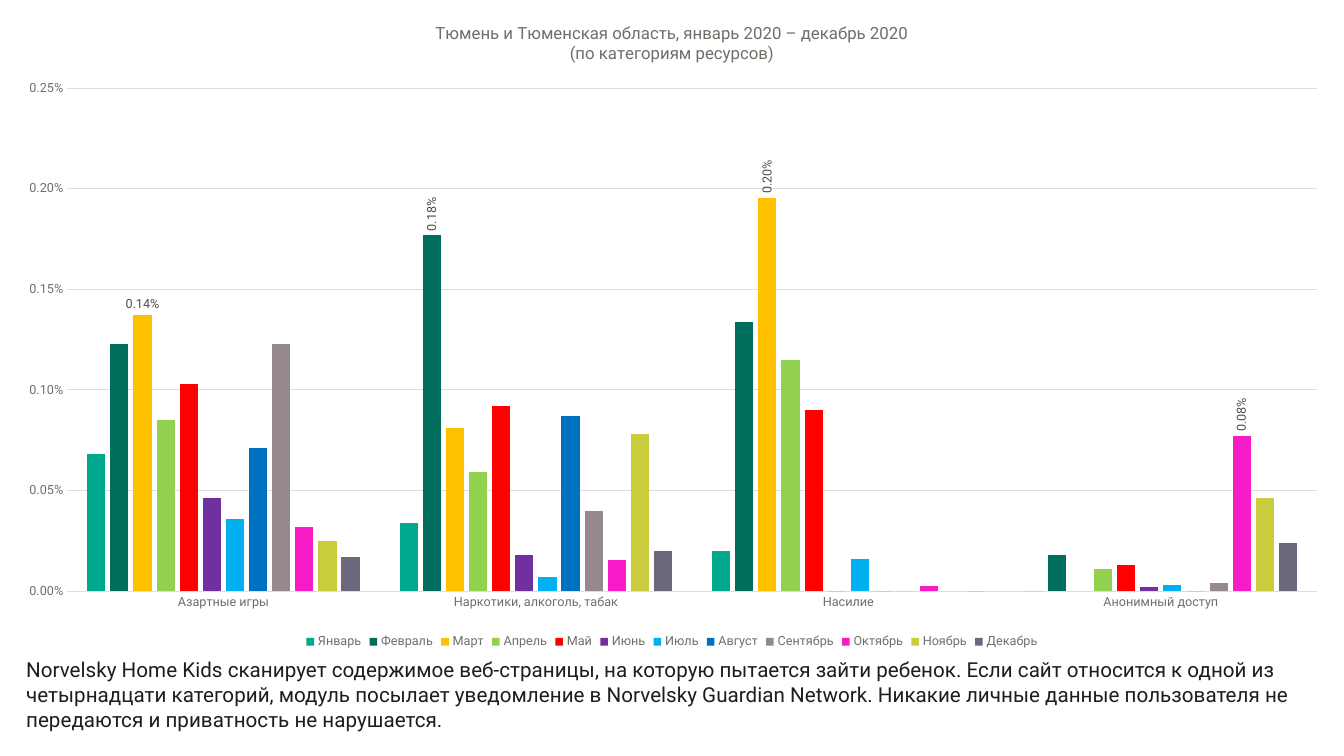
from lxml import etree
from pptx import Presentation
from pptx.chart.data import CategoryChartData
from pptx.dml.color import RGBColor
from pptx.enum.chart import XL_CHART_TYPE, XL_LABEL_POSITION, XL_LEGEND_POSITION, XL_TICK_MARK
from pptx.oxml.ns import qn
from pptx.util import Inches, Pt

COLUMNS = XL_CHART_TYPE.COLUMN_CLUSTERED
OUTSIDE = XL_LABEL_POSITION.OUTSIDE_END
BOTTOM = XL_LEGEND_POSITION.BOTTOM
NO_TICK = XL_TICK_MARK.NONE

FONT = "Roboto"
PERCENT = "0.00%"
COLORS = {"text": "1D1D1B", "muted": "6F6F68", "label": "4D4D49", "grid": "DEDEDC"}
TITLE_LINES = ["Тюмень и Тюменская область, январь 2020 – декабрь 2020",
               "(по категориям ресурсов)"]
CATEGORIES = ["Азартные игры", "Наркотики, алкоголь, табак", "Насилие", "Анонимный доступ"]
# Month, colour, values in percent by category
MONTHS = [
    ("Январь", "00A88E", (0.068, 0.034, 0.02, 0)),
    ("Февраль", "006D5D", (0.1227, 0.1768, 0.1335, 0.018)),
    ("Март", "FFC000", (0.137, 0.0808, 0.1954, 0)),
    ("Апрель", "92D050", (0.085, 0.059, 0.115, 0.011)),
    ("Май", "FF0000", (0.103, 0.092, 0.09, 0.013)),
    ("Июнь", "7030A0", (0.046, 0.018, 0, 0.002)),
    ("Июль", "00B0F0", (0.036, 0.007, 0.016, 0.003)),
    ("Август", "0070C0", (0.071, 0.087, 0, 0)),
    ("Сентябрь", "95888F", (0.123, 0.04, 0, 0.004)),
    ("Октябрь", "F71BC8", (0.0317, 0.0152, 0.0025, 0.0772)),
    ("Ноябрь", "C9CC3C", (0.025, 0.078, 0, 0.046)),
    ("Декабрь", "6D677D", (0.017, 0.02, 0, 0.024)),
]
# Month, category index, rotation in degrees
PEAK_LABELS = [("Март", 0, 0), ("Февраль", 1, -90), ("Март", 2, -90), ("Октябрь", 3, -90)]
NOTE = ("Norvelsky Home Kids сканирует содержимое веб-страницы, на которую пытается зайти "
        "ребенок. Если сайт относится к одной из четырнадцати категорий, модуль посылает "
        "уведомление в Norvelsky Guardian Network. Никакие личные данные пользователя не "
        "передаются и приватность не нарушается.")


class SlideBuilder:
    def __init__(self, page):
        self.page = page

    def style_font(self, font, size, color):
        font.name = FONT
        font.size = Pt(size)
        font.bold = False
        font.color.rgb = RGBColor.from_string(COLORS[color])

    def style_line(self, line):
        line.color.rgb = RGBColor.from_string(COLORS["grid"])
        line.width = Pt(0.75)

    def add_column_chart(self, left, top, width, height):
        data = CategoryChartData(number_format=PERCENT)
        data.categories = CATEGORIES
        for month, _, values in MONTHS:
            data.add_series(month, [round(value / 100, 6) for value in values])
        chart = self.page.shapes.add_chart(
            COLUMNS, Inches(left), Inches(top), Inches(width), Inches(height), data).chart
        plot = chart.plots[0]
        plot.gap_width, plot.overlap, plot.vary_by_categories = 219, -27, False
        for series, (_, color, _) in zip(plot.series, MONTHS):
            series.format.fill.solid()
            series.format.fill.fore_color.rgb = RGBColor.from_string(color)
            series.invert_if_negative = False
        self.add_chart_title(chart)
        self.style_axes(chart)
        chart.has_legend = True
        chart.legend.position = BOTTOM
        chart.legend.include_in_layout = False
        self.style_font(chart.legend.font, 9, "muted")
        return chart

    def add_chart_title(self, chart):
        chart.has_title = True
        chart.chart_title.include_in_layout = False
        frame = chart.chart_title.text_frame
        frame.text = "\n".join(TITLE_LINES)
        for para in frame.paragraphs:
            self.style_font(para.font, 12, "muted")

    def style_axes(self, chart):
        for axis in (chart.category_axis, chart.value_axis):
            axis.major_tick_mark = axis.minor_tick_mark = NO_TICK
            self.style_font(axis.tick_labels.font, 9, "muted")
        self.style_line(chart.category_axis.format.line)
        values = chart.value_axis
        values.minimum_scale, values.maximum_scale, values.major_unit = 0, 0.0025, 0.0005
        values.tick_labels.number_format = PERCENT
        values.tick_labels.number_format_is_linked = False
        values.format.line.fill.background()
        self.style_line(values.major_gridlines.format.line)

    def place_plot(self, chart, **fractions):
        """Fix the inner plot area, given as fractions of the chart frame."""
        area = chart.plots[0]._element.getparent()
        for old in area.findall(qn("c:layout")):
            area.remove(old)
        layout = etree.Element(qn("c:layout"))
        area.insert(0, layout)
        manual = etree.SubElement(layout, qn("c:manualLayout"))
        settings = {"layoutTarget": "inner", "xMode": "edge", "yMode": "edge", **fractions}
        for name, value in settings.items():
            etree.SubElement(manual, qn(f"c:{name}")).set("val", str(value))

    def label_peaks(self, chart):
        series_by_month = {series.name: series for series in chart.plots[0].series}
        for month, index, degrees in PEAK_LABELS:
            series = series_by_month[month]
            series.data_labels.show_value = False
            label = series.points[index].data_label
            self.style_font(label.font, 9, "label")
            label.position = OUTSIDE
            query = f"c:dLbls/c:dLbl[c:idx/@val='{index}']/c:txPr/a:bodyPr"
            body = series._element.xpath(query)[0]
            body.set("rot", str(degrees * 60000))
            body.set("vert", "horz")

    def add_text(self, text, left, top, width, height, size):
        box = self.page.shapes.add_textbox(
            Inches(left), Inches(top), Inches(width), Inches(height))
        frame = box.text_frame
        frame.word_wrap = True
        frame.margin_left = frame.margin_right = Inches(0.13)
        frame.margin_top = frame.margin_bottom = Inches(0.07)
        frame.text = text
        self.style_font(frame.paragraphs[0].font, size, "text")


def main():
    deck = Presentation()
    deck.slide_width, deck.slide_height = Inches(13.33), Inches(7.5)
    blank_layout = deck.slide_layouts[6]
    builder = SlideBuilder(deck.slides.add_slide(blank_layout))
    chart = builder.add_column_chart(0, 0, 13.33, 6.48)
    builder.place_plot(chart, x=0.05, y=0.135, w=0.93, h=0.77)
    builder.label_peaks(chart)
    builder.add_text(NOTE, 0.13, 6.45, 12.97, 0.87, 14.7)
    deck.save("out.pptx")


if __name__ == "__main__":
    main()
